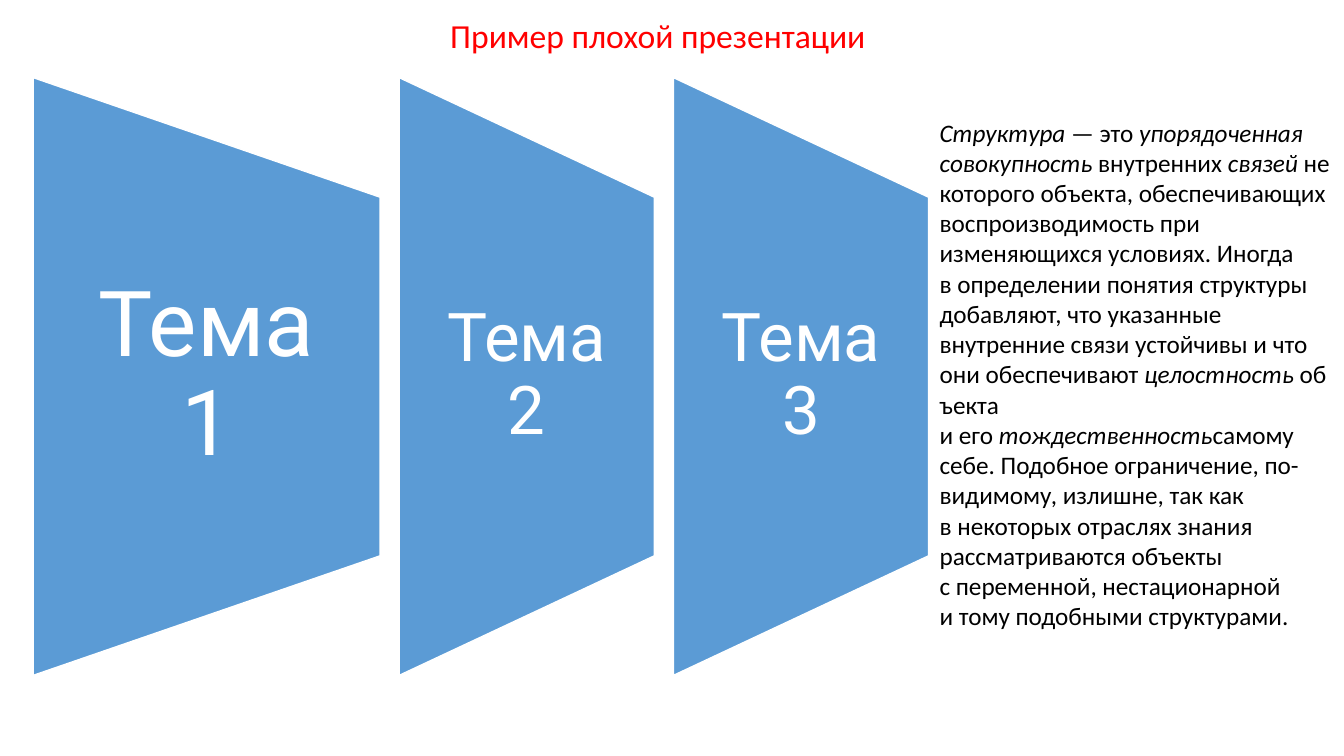
from pptx import Presentation
from pptx.dml.color import RGBColor
from pptx.enum.shapes import MSO_SHAPE
from pptx.enum.text import MSO_ANCHOR, MSO_AUTO_SIZE, PP_ALIGN
from pptx.util import Inches, Pt

BLUE = RGBColor(0x5B, 0x9B, 0xD5)
WHITE = RGBColor(255, 255, 255)
BLACK = RGBColor(0, 0, 0)
RED = RGBColor(255, 0, 0)

# Row of panels, in inches
LEFT, TOP, TALL, GAP = 0.33, 0.77, 5.93, 0.19
# Label, width, text size, side inset
PANELS = [("Тема 1", 3.44, 65, 0.45),
          ("Тема 2", 2.53, 48, 0.33),
          ("Тема 3", 2.53, 48, 0.33)]

# Pieces alternate between italic and upright; "~" is a no-break space
HARD = chr(160)
BODY = [
    "Структура", "~— это~", "упорядоченная совокупность",
    "~внутренних~", "связей",
    "~некоторого объекта, обеспечивающих воспроизводимость при "
    "изменяющихся условиях. Иногда в~определении понятия структуры "
    "добавляют, что указанные внутренние связи устойчивы и~что "
    "они~обеспечивают~",
    "целостность", "~объекта и~его~", "тождественность",
    "самому себе. Подобное ограничение,~по-видимому, излишне, "
    "так~как в~некоторых отраслях знания рассматриваются объекты "
    "с~переменной, нестационарной и~тому подобными структурами.",
]


def place(shape, left, top, width, height):
    shape.left, shape.top = Inches(left), Inches(top)
    shape.width, shape.height = Inches(width), Inches(height)


def style(para, face, size, color, align):
    font = para.font
    font.name, font.size, font.color.rgb = face, Pt(size), color
    para.alignment = align


def add_box(slide, left, top, width, height):
    box = slide.shapes.add_textbox(*map(Inches, (left, top, width, height)))
    box.text_frame.word_wrap = True
    return box.text_frame


def add_title(slide, text):
    title = slide.shapes.title
    place(title, 3.8, 0.1, 5.45, 0.5)
    frame = title.text_frame
    frame.text = text
    frame.auto_size = MSO_AUTO_SIZE.NONE
    frame.vertical_anchor = MSO_ANCHOR.TOP
    style(frame.paragraphs[0], "Calibri", 24, RED, PP_ALIGN.CENTER)


def add_panel(slide, left, label, width, size, inset):
    # The shape is turned on its side, so its width is the panel's height
    mid = TOP + TALL / 2
    panel = slide.shapes.add_shape(MSO_SHAPE.FLOWCHART_MANUAL_OPERATION,
                                   0, 0, 0, 0)
    place(panel, left + (width - TALL) / 2, mid - width / 2, TALL, width)
    panel.rotation = 270
    panel.shadow.inherit = False
    panel.fill.solid()
    panel.fill.fore_color.rgb = BLUE
    panel.line.color.rgb = WHITE
    panel.line.width = Pt(1)

    # Upright label over the middle three fifths
    frame = add_box(slide, left, TOP + TALL / 5, width, TALL * 3 / 5)
    frame.margin_left = frame.margin_right = Inches(inset)
    frame.margin_top = frame.margin_bottom = 0
    frame.vertical_anchor = MSO_ANCHOR.MIDDLE
    para = frame.paragraphs[0]
    para.text = label
    para.line_spacing = 0.9
    style(para, "Roboto", size, WHITE, PP_ALIGN.CENTER)


def add_body(slide, parts):
    para = add_box(slide, 9.22, 1.11, 4.12, 5.25).paragraphs[0]
    style(para, "Calibri", 18, BLACK, PP_ALIGN.LEFT)
    for i, part in enumerate(parts):
        run = para.add_run()
        run.text = part.replace("~", HARD)
        run.font.italic = i % 2 == 0


def main():
    deck = Presentation()
    deck.slide_width, deck.slide_height = Inches(13.33), Inches(7.5)
    slide = deck.slides.add_slide(deck.slide_layouts.get_by_name("Title Only"))

    # Title
    add_title(slide, "Пример плохой презентации")

    # Panels from left to right
    left = LEFT
    for label, width, size, inset in PANELS:
        add_panel(slide, left, label, width, size, inset)
        left += width + GAP

    # Definition
    add_body(slide, BODY)
    deck.save("out.pptx")


if __name__ == "__main__":
    main()
